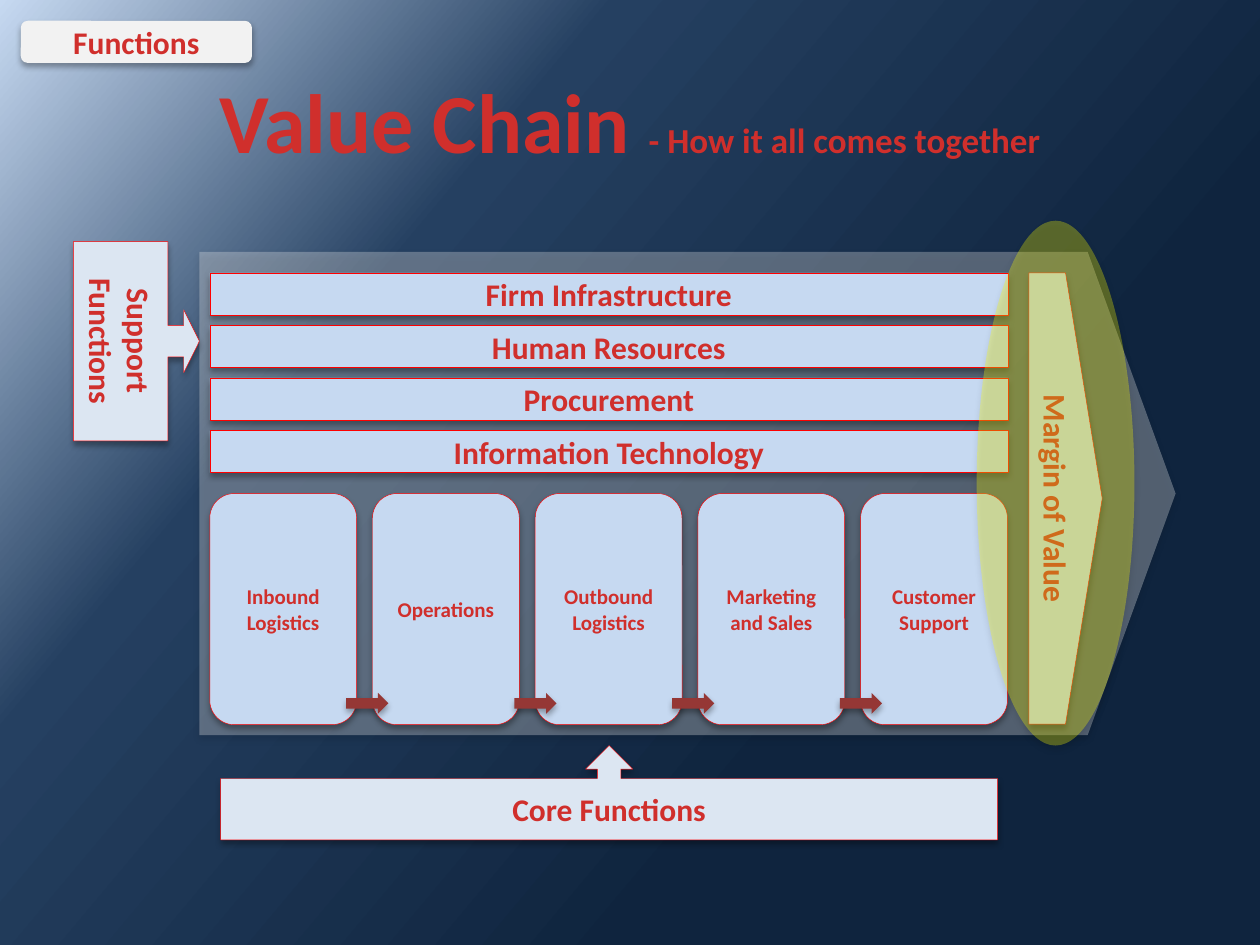
from lxml.etree import SubElement
from pptx import Presentation
from pptx.dml.color import RGBColor
from pptx.enum.shapes import MSO_SHAPE
from pptx.enum.text import MSO_ANCHOR, MSO_AUTO_SIZE, PP_ALIGN
from pptx.oxml.ns import qn
from pptx.util import Cm, Pt

COLORS = {
    "text": "D02F2C", "outline": "FF0000", "tile": "C6D9F1",
    "callout": "DCE6F2", "pale": "F2F2F2", "arrow": "953735",
    "highlight": "FFFF00", "shadow": "000000",
}
BACKGROUND_STOPS = [(0, "C6D9F1"), (30, "254061"), (69, "0F243E"), (100, "0F243E")]
BACKGROUND_ANGLE = 40

SUPPORT = ["Firm Infrastructure", "Human Resources", "Procurement",
           "Information Technology"]
CORE = ["Inbound Logistics", "Operations", "Outbound Logistics",
        "Marketing and Sales", "Customer Support"]
LINK_OFFSETS = [2.96, 6.35, 9.53, 12.91]


def add_span(para, text, size=18):
    span = para.add_run()
    span.text = text
    span.font.name = "Calibri"
    span.font.size = Pt(size)
    span.font.bold = True
    span.font.color.rgb = RGBColor.from_string(COLORS["text"])


def add_shadow(box):
    box.shadow.inherit = False
    effects = box.element.spPr.find(qn("a:effectLst"))
    shadow = SubElement(effects, qn("a:outerShdw"), blurRad=str(Pt(3.5)),
                        dist=str(Pt(2.2)), dir="5400000", rotWithShape="0")
    color = SubElement(shadow, qn("a:srgbClr"), val=COLORS["shadow"])
    SubElement(color, qn("a:alpha"), val="32000")


def add_block(page, kind, left, top, width, height, fill, text="", size=18,
              outline=False, opacity=None, vertical=False, adjust=()):
    """Place a shadowed shape, measured in centimetres, with optional text."""
    box = page.shapes.add_shape(kind, Cm(left), Cm(top), Cm(width), Cm(height))
    for index, value in enumerate(adjust):
        box.adjustments[index] = value
    box.fill.solid()
    box.fill.fore_color.rgb = RGBColor.from_string(COLORS[fill])
    if opacity:
        color = box.element.spPr.find(qn("a:solidFill")).find(qn("a:srgbClr"))
        SubElement(color, qn("a:alpha"), val=str(opacity * 1000))
    if outline:
        box.line.color.rgb = RGBColor.from_string(COLORS["outline"])
        box.line.width = Pt(0.25)
    else:
        box.line.fill.background()
    add_shadow(box)
    if text:
        frame = box.text_frame
        frame.word_wrap = True
        frame.vertical_anchor = MSO_ANCHOR.MIDDLE
        if vertical:
            frame._txBody.bodyPr.set("vert", "vert")
        para = frame.paragraphs[0]
        para.alignment = PP_ALIGN.CENTER
        add_span(para, text, size)
    return box


def paint_background(page):
    page.background.fill.gradient()
    gradient = page.element.find(".//" + qn("a:gradFill"))
    stops = gradient.find(qn("a:gsLst"))
    for stop in list(stops):
        stops.remove(stop)
    for position, color in BACKGROUND_STOPS:
        stop = SubElement(stops, qn("a:gs"), pos=str(position * 1000))
        SubElement(stop, qn("a:srgbClr"), val=color)
    direction = gradient.find(qn("a:lin"))
    direction.set("ang", str(BACKGROUND_ANGLE * 60000))
    direction.set("scaled", "0")


def add_chain(page, left, top, width, height):
    # Large arrow behind everything
    add_block(page, MSO_SHAPE.PENTAGON, left, top, width, height, "pale",
              opacity=30, adjust=[0.182])
    # Core activities, side by side
    for index, name in enumerate(CORE):
        add_block(page, MSO_SHAPE.ROUNDED_RECTANGLE, left + 0.21 + index * 3.28,
                  top + 4.87, 2.96, 4.66, "tile", name, size=12, outline=True)
    # Support activities, stacked
    for index, name in enumerate(SUPPORT):
        add_block(page, MSO_SHAPE.RECTANGLE, left + 0.21, top + 0.42 + index * 1.06,
                  16.09, 0.85, "tile", name, outline=True)
    # Arrows from one core activity to the next
    for offset in LINK_OFFSETS:
        add_block(page, MSO_SHAPE.RIGHT_ARROW, left + offset, top + 8.89,
                  0.85, 0.42, "arrow")
    # Margin at the tip
    add_block(page, MSO_SHAPE.PENTAGON, left + 16.72, top + 0.42, 1.48, 9.1,
              "tile", "Margin of Value", outline=True, vertical=True)


def add_callouts(page, left, top):
    add_block(page, MSO_SHAPE.UP_ARROW_CALLOUT, left + 2.97, top + 10.16,
              15.66, 1.9, "callout", "Core Functions", outline=True)
    add_block(page, MSO_SHAPE.RIGHT_ARROW_CALLOUT, left, top, 2.54, 4.02,
              "callout", "Support Functions", outline=True, vertical=True,
              adjust=[0.25, 0.25, 0.124, 0.75])


def add_title(page, left, top, width, height):
    box = page.shapes.add_textbox(Cm(left), Cm(top), Cm(width), Cm(height))
    frame = box.text_frame
    frame.word_wrap = True
    frame.auto_size = MSO_AUTO_SIZE.SHAPE_TO_FIT_TEXT
    para = frame.paragraphs[0]
    para.alignment = PP_ALIGN.CENTER
    add_span(para, "Value Chain ", size=48)
    add_span(para, "- How it all comes together", size=20)


def main():
    deck = Presentation()
    deck.slide_width, deck.slide_height = Cm(25.4), Cm(19.05)
    page = deck.slides.add_slide(deck.slide_layouts[6])
    paint_background(page)
    add_chain(page, 4.02, 5.08, 19.68, 9.74)
    add_callouts(page, 1.48, 4.87)
    # Highlight over the margin
    add_block(page, MSO_SHAPE.OVAL, 19.69, 4.45, 3.18, 10.58, "highlight", opacity=30)
    add_title(page, 0, 1.27, 25.4, 2.31)
    # Section label
    add_block(page, MSO_SHAPE.ROUNDED_RECTANGLE, 0.42, 0.42, 4.66, 0.85,
              "pale", "Functions")
    deck.save("out.pptx")


if __name__ == "__main__":
    main()
